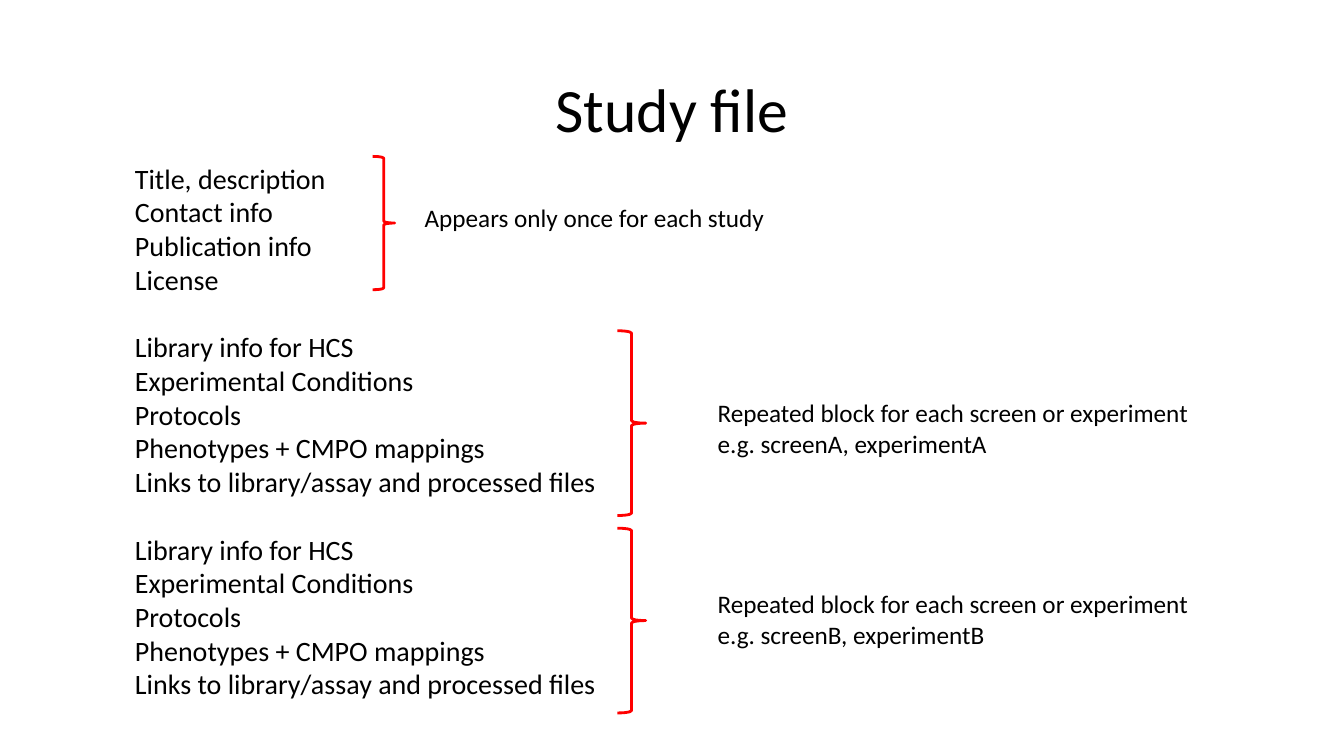
from dataclasses import dataclass

from pptx import Presentation
from pptx.dml.color import RGBColor
from pptx.enum.shapes import MSO_SHAPE
from pptx.enum.text import MSO_ANCHOR, PP_ALIGN
from pptx.shapes.base import BaseShape
from pptx.slide import Slide
from pptx.text.text import _Paragraph
from pptx.util import Emu, Pt

SCALE = 9525
FONT = "Calibri"
BLACK = "000000"
RED = "FF0000"


@dataclass(frozen=True)
class Box:
    """A rectangle in px."""
    left: int
    top: int
    width: int
    height: int


@dataclass(frozen=True)
class Block:
    """A group of study fields with its brace and its note."""
    fields: tuple[str, ...]
    brace: Box
    spot: Box
    note: tuple[str, ...]


STUDY = ("Title, description", "Contact info", "Publication info", "License")
SCREEN = (
    "Library info for HCS",
    "Experimental Conditions",
    "Protocols",
    "Phenotypes + CMPO mappings",
    "Links to library/assay and processed files",
)
REPEAT = "Repeated block for each screen or experiment"
BLOCKS = (
    Block(STUDY, Box(355, 149, 21, 127), Box(395, 188, 347, 38),
          ("Appears only once for each study",)),
    Block(SCREEN, Box(588, 315, 27, 176), Box(674, 374, 473, 68),
          (REPEAT, "e.g. screenA, experimentA")),
    Block(SCREEN, Box(588, 503, 27, 176), Box(674, 556, 473, 68),
          (REPEAT, "e.g. screenB, experimentB")),
)


def px(count: int) -> Emu:
    """Turn px into EMU."""
    return Emu(count * SCALE)


def color(code: str) -> RGBColor:
    """Turn a hex string into a colour."""
    return RGBColor.from_string(code)


def frame(box: Box) -> tuple[Emu, Emu, Emu, Emu]:
    """Give a box as four EMU lengths."""
    return px(box.left), px(box.top), px(box.width), px(box.height)


def style(para: _Paragraph, size: int) -> None:
    """Set the font of a paragraph."""
    para.font.name = FONT
    para.font.size = Pt(size)
    para.font.color.rgb = color(BLACK)


def set_title(shape: BaseShape, text: str, box: Box) -> None:
    """Place and format the title."""
    shape.left, shape.top, shape.width, shape.height = frame(box)
    shape.text_frame.text = text
    shape.text_frame.vertical_anchor = MSO_ANCHOR.MIDDLE
    para = shape.text_frame.paragraphs[0]
    para.alignment = PP_ALIGN.CENTER
    para.line_spacing = 0.9
    style(para, 44)


def add_text(slide: Slide, box: Box, groups: list[tuple[str, ...]],
             size: int, wrap: bool) -> None:
    """Write groups of lines, one line's height apart."""
    body = slide.shapes.add_textbox(*frame(box)).text_frame
    body.word_wrap = wrap
    body.text = "\n".join(line for group in groups for line in group)
    for para in body.paragraphs:
        style(para, size)
    start = 0
    for group in groups[:-1]:
        start += len(group)
        body.paragraphs[start].space_before = Pt(size * 1.22)


def add_brace(slide: Slide, box: Box) -> None:
    """Draw a red right brace."""
    brace = slide.shapes.add_shape(MSO_SHAPE.RIGHT_BRACE, *frame(box))
    brace.shadow.inherit = False
    brace.fill.background()
    brace.line.color.rgb = color(RED)
    brace.line.width = Pt(2)


def main() -> None:
    """Build the slide and save it."""
    deck = Presentation()
    deck.slide_width, deck.slide_height = px(1280), px(720)
    slide = deck.slides.add_slide(deck.slide_layouts.get_by_name("Title Only"))
    set_title(slide.shapes.title, "Study file", Box(88, 38, 1104, 139))
    add_text(slide, Box(119, 149, 640, 559),
             [block.fields for block in BLOCKS], 20, True)
    for block in BLOCKS:
        add_brace(slide, block.brace)
        add_text(slide, block.spot, [block.note], 18, False)
    deck.save("out.pptx")


if __name__ == "__main__":
    main()
